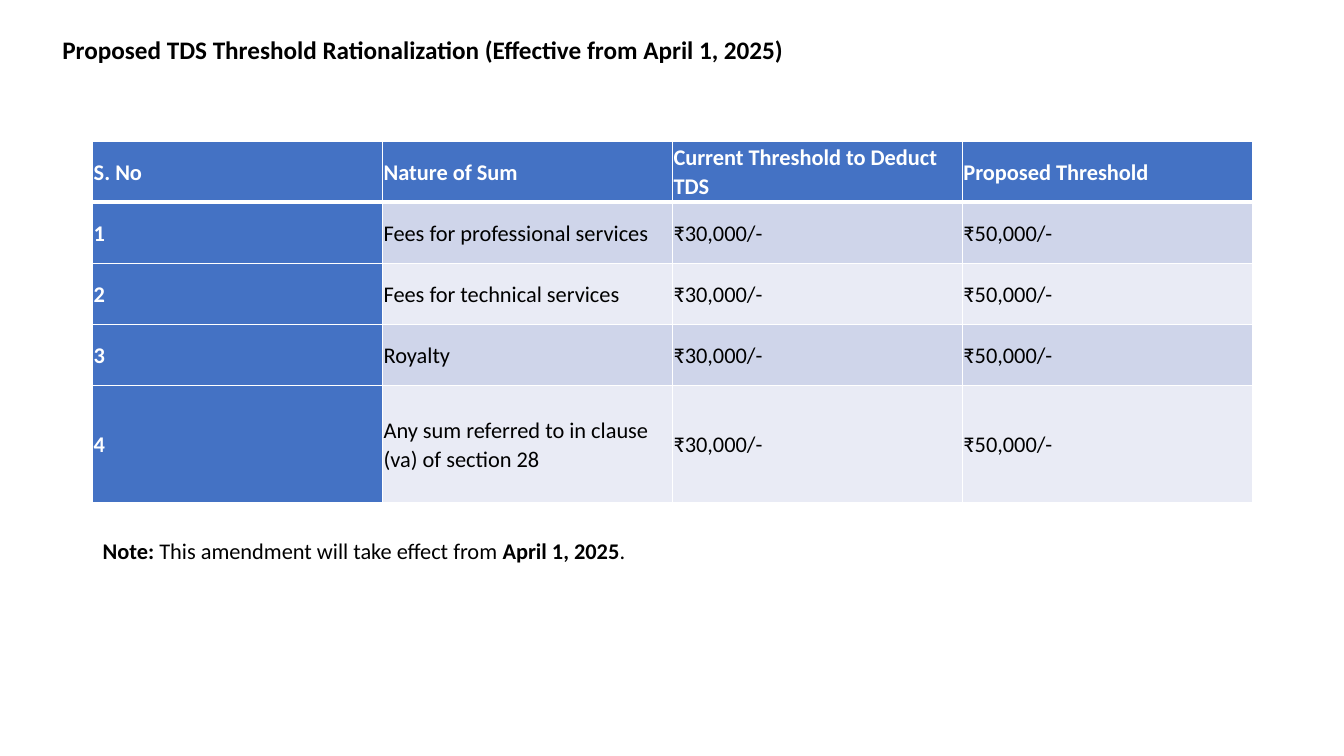
import dataclasses

import lxml.etree
import pptx
import pptx.dml.color
import pptx.enum.text
import pptx.oxml.ns
import pptx.util

WIDTH, HEIGHT = pptx.util.Inches(13.33), pptx.util.Inches(7.5)
FONT = "Calibri"
BLACK, WHITE, BLUE = "000000", "FFFFFF", "4472C4"
BANDS = ("CFD5EA", "E9EBF5")
LINE_SPACING, SPACE_AFTER = 1.07, 8
TABLE_LEFT, TABLE_TOP, COLUMN_WIDTH = 6.9, 18.67, 21.57
ROW_HEIGHTS = (8.07, 8.07, 8.07, 8.07, 15.6)
CURRENT, PROPOSED = "₹30,000/-", "₹50,000/-"
HEADERS = ("S. No", "Nature of Sum", "Current Threshold to Deduct TDS", "Proposed Threshold")
SUMS = (
    "Fees for professional services",
    "Fees for technical services",
    "Royalty",
    "Any sum referred to in clause (va) of section 28",
)


@dataclasses.dataclass(frozen=True)
class Label:
    """A text box placed in percent of the slide, with (text, bold) runs."""

    left: float
    top: float
    width: float
    height: float
    size: int
    runs: tuple[tuple[str, bool], ...]
    wrap: bool
    anchor: pptx.enum.text.MSO_ANCHOR
    spaced: bool


TITLE = Label(3.9, 3.6, 58.74, 5.47, 18,
              (("Proposed TDS Threshold Rationalization (Effective from April 1, 2025)", True),),
              True, pptx.enum.text.MSO_ANCHOR.TOP, True)
NOTE = Label(TABLE_LEFT, 70.4, 40.88, 4.93, 16,
             (("Note:", True), (" This amendment will take effect from ", False),
              ("April 1, 2025", True), (".", False)),
             False, pptx.enum.text.MSO_ANCHOR.MIDDLE, False)


def across(percent: float) -> int:
    """Return a share of the slide width."""
    return round(WIDTH * percent / 100)


def down(percent: float) -> int:
    """Return a share of the slide height."""
    return round(HEIGHT * percent / 100)


def rgb(color: str) -> pptx.dml.color.RGBColor:
    """Turn a hex string into a colour."""
    return pptx.dml.color.RGBColor.from_string(color)


def style_run(r, size: int, color: str, bold: bool) -> None:
    """Format one run."""
    r.font.name, r.font.size, r.font.bold = FONT, pptx.util.Pt(size), bold
    r.font.color.rgb = rgb(color)


def space(p) -> None:
    """Give a paragraph the slide's line and paragraph spacing."""
    p.line_spacing, p.space_after = LINE_SPACING, pptx.util.Pt(SPACE_AFTER)


def add_label(s, label: Label) -> None:
    """Draw a text box."""
    sp = s.shapes.add_textbox(across(label.left), down(label.top),
                              across(label.width), down(label.height))
    tf = sp.text_frame
    tf.word_wrap, tf.vertical_anchor = label.wrap, label.anchor
    tf.auto_size = pptx.enum.text.MSO_AUTO_SIZE.SHAPE_TO_FIT_TEXT
    p = tf.paragraphs[0]
    if label.spaced:
        space(p)
    for text, bold in label.runs:
        r = p.add_run()
        r.text = text
        style_run(r, label.size, BLACK, bold)


def add_borders(cell, row: int) -> None:
    """Draw white cell borders, thick between the header and the body."""
    qn = pptx.oxml.ns.qn
    tc_pr = cell._tc.get_or_add_tcPr()
    thick = {"T": row == 1, "B": row == 0}
    for side in "LRTB":
        width = pptx.util.Pt(3 if thick.get(side) else 1)
        ln = lxml.etree.SubElement(tc_pr, qn(f"a:ln{side}"), w=str(width))
        fill = lxml.etree.SubElement(ln, qn("a:solidFill"))
        lxml.etree.SubElement(fill, qn("a:srgbClr"), val=WHITE)


def fill_cell(cell, text: str, row: int, column: int) -> None:
    """Write and style one table cell."""
    heading = row == 0 or column == 0
    cell.margin_left = cell.margin_right = pptx.util.Inches(0.01)
    cell.margin_top = cell.margin_bottom = pptx.util.Inches(0.01)
    cell.vertical_anchor = pptx.enum.text.MSO_ANCHOR.MIDDLE
    add_borders(cell, row)
    cell.fill.solid()
    cell.fill.fore_color.rgb = rgb(BLUE if heading else BANDS[(row - 1) % 2])
    p = cell.text_frame.paragraphs[0]
    p.text = text
    space(p)
    style_run(p.runs[0], 16, WHITE if heading else BLACK, heading)


def add_thresholds(s) -> None:
    """Draw the threshold table."""
    rows = [HEADERS] + [(str(i), name, CURRENT, PROPOSED) for i, name in enumerate(SUMS, 1)]
    table = s.shapes.add_table(len(rows), len(HEADERS), across(TABLE_LEFT), down(TABLE_TOP),
                               across(COLUMN_WIDTH * len(HEADERS)), down(sum(ROW_HEIGHTS))).table
    for column in table.columns:
        column.width = across(COLUMN_WIDTH)
    for i, (height, texts) in enumerate(zip(ROW_HEIGHTS, rows)):
        table.rows[i].height = down(height)
        for j, text in enumerate(texts):
            fill_cell(table.cell(i, j), text, i, j)


def main() -> None:
    """Build and save the slide."""
    prs = pptx.Presentation()
    prs.slide_width, prs.slide_height = WIDTH, HEIGHT
    s = prs.slides.add_slide(prs.slide_layouts[6])
    add_label(s, TITLE)
    add_thresholds(s)
    add_label(s, NOTE)
    prs.save("out.pptx")


if __name__ == "__main__":
    main()
